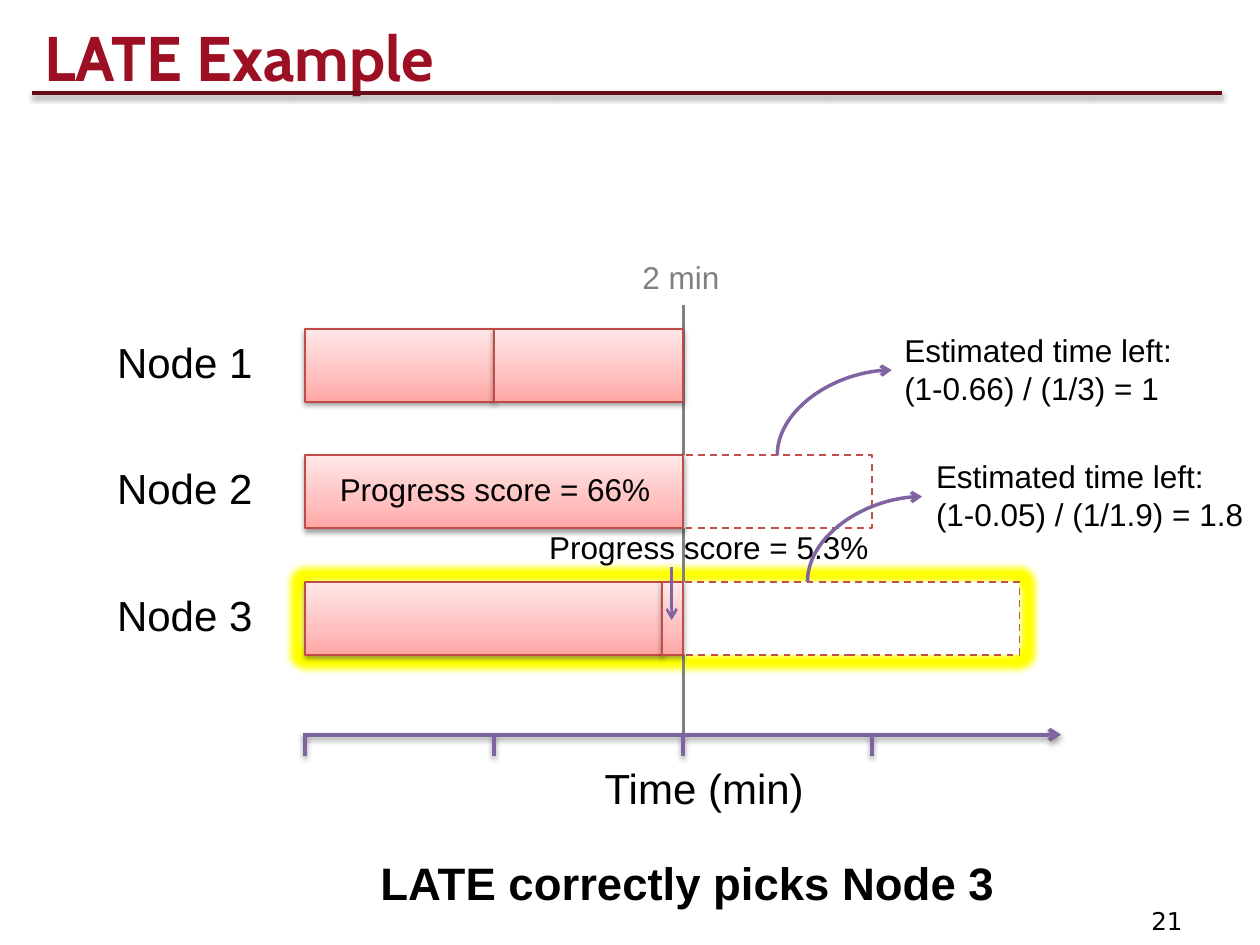
"""Build the LATE example slide: node progress bars over a time axis."""
from copy import deepcopy
from lxml.etree import SubElement as Sub
from pptx import Presentation
from pptx.dml.color import RGBColor as Rgb
from pptx.enum.dml import MSO_LINE as Dash
from pptx.enum.shapes import MSO_CONNECTOR as Link, MSO_SHAPE as Kind
from pptx.enum.text import MSO_ANCHOR as Anchor, PP_ALIGN as Align
from pptx.oxml.ns import qn
from pptx.util import Cm, Pt

HUES = {
    "title": "9D1023", "rule": "680B17", "text": "000000", "mark": "808080",
    "axis": "8064A2", "edge": "BF4C48", "dash": "C0504D", "glow": "FFFF00",
    "white": "FFFFFF", "low": "FFA6A5", "mid": "FFC0BF", "high": "FFE7E7",
}
LEFT, UNIT = 6.15, 3.81
TOP, STEP, BAR = 6.63, 2.55, 1.47
AXIS = 14.81


def hue(name):
    return Rgb.from_string(HUES[name])


def at(time):
    return LEFT + UNIT * time


def row(node):
    return TOP + STEP * (node - 1)


def effect(shape, tag, name, alpha, **attrs):
    """Add one effect to a shape or connector."""
    props = shape.element.spPr
    box = props.find(qn("a:effectLst"))
    if box is None:
        box = Sub(props, qn("a:effectLst"))
    item = Sub(box, qn(tag), attrs)
    color = Sub(item, qn("a:srgbClr"), val=HUES[name])
    Sub(color, qn("a:alpha"), val=str(alpha * 1000))


def shade(shape):
    effect(shape, "a:outerShdw", "text", 38, blurRad="40000", dist="20000",
           dir="5400000", rotWithShape="0")


def style(font, size, color="text", bold=False, face="Arial"):
    font.size, font.bold, font.name = Pt(size), bold, face
    font.color.rgb = hue(color)


def label(slide, text, box, size, wrap=False, **look):
    """Add a text box with one look for all its lines."""
    frame = slide.shapes.add_textbox(*map(Cm, box)).text_frame
    frame.word_wrap = wrap
    frame.text = text
    for para in frame.paragraphs:
        style(para.font, size, **look)


def line(slide, ends, color, width, shadow=False, arrow=None, kind=Link.STRAIGHT):
    """Add a connector, with an arrowhead at headEnd or tailEnd if asked."""
    link = slide.shapes.add_connector(kind, *map(Cm, ends))
    link.line.color.rgb = hue(color)
    link.line.width = Pt(width)
    props = link.element.spPr
    if arrow:
        Sub(props.find(qn("a:ln")), qn(arrow), type="arrow")
    Sub(props, qn("a:effectLst"))
    if shadow:
        shade(link)
    return link


def curve(slide, x, y):
    """Add a quarter curve that rises from a bar to its estimate."""
    link = line(slide, (x + 2.31, y - 1.72, x, y), "axis", 2,
                arrow="a:headEnd", kind=Link.CURVE)
    link.element.spPr.find(qn("a:prstGeom")).set("prst", "curvedConnector2")


def block(slide, box, edge, width, kind=Kind.RECTANGLE):
    shape = slide.shapes.add_shape(kind, *map(Cm, box))
    shape.shadow.inherit = False
    shape.line.color.rgb = hue(edge)
    shape.line.width = Pt(width)
    return shape


def span(node, start, end):
    return at(start), row(node), UNIT * (end - start), BAR


def done(slide, node, start, end):
    """Add a bar of finished work with a three-stop gradient."""
    shape = block(slide, span(node, start, end), "edge", 1)
    fill = shape.fill
    fill.gradient()
    fill.gradient_angle = 90
    stop = next(shape.element.spPr.iter(qn("a:gs")))
    stop.addnext(deepcopy(stop))
    shades = (("low", 0), ("mid", 0.35), ("high", 1))
    for part, (name, place) in zip(fill.gradient_stops, shades):
        part.color.rgb = hue(name)
        part.position = place
    shade(shape)


def left(slide, node, start, end):
    """Add a dashed bar of work still to do."""
    shape = block(slide, span(node, start, end), "dash", 1)
    shape.fill.solid()
    shape.fill.fore_color.rgb = hue("white")
    shape.line.dash_style = Dash.DASH


def halo(slide):
    shape = block(slide, (5.97, 11.58, 14.73, 1.75), "glow", 0.75,
                  Kind.ROUNDED_RECTANGLE)
    shape.fill.background()
    effect(shape, "a:glow", "glow", 100, rad="101600")


def head(slide):
    """Format the title and draw the rule below it."""
    line(slide, (0.64, 1.88, 24.64, 1.88), "rule", 2, shadow=True)
    title = slide.shapes.title
    title.left, title.top, title.width, title.height = map(
        Cm, (0.64, 0.23, 24, 1.8))
    frame = title.text_frame
    frame.text = "LATE Example"
    frame.vertical_anchor = Anchor.MIDDLE
    para = frame.paragraphs[0]
    para.alignment = Align.LEFT
    style(para.font, 36, "title", True, "Cabin")


def bars(slide):
    halo(slide)
    line(slide, (at(2), AXIS + 0.1, at(2), 6.15), "mark", 1.75)
    left(slide, 3, 2, 3.78)
    left(slide, 2, 2, 3)
    for node in (1, 2, 3):
        label(slide, f"Node {node}", (2.11, row(node) + 0.02, 3.28, 1.28), 24)
    for part in ((1, 0, 1), (2, 0, 2), (1, 1, 2), (3, 0, 1.89), (3, 1.89, 2)):
        done(slide, *part)


def axis(slide):
    line(slide, (LEFT - 0.05, AXIS, at(4), AXIS), "axis", 2.25,
         shadow=True, arrow="a:tailEnd")
    for time in range(4):
        line(slide, (at(time), AXIS, at(time), AXIS + 0.43), "axis", 2, shadow=True)
    label(slide, "2 min", (12.7, 5.08, 2.08, 1.02), 18, color="mark")
    label(slide, "Time (min)", (11.94, 15.24, 4.57, 1.28), 24)


def notes(slide):
    label(slide, "Progress score = 5.3%", (10.82, 10.52, 7.01, 1.02), 18)
    line(slide, (13.54, 11.43, 13.54, 12.5), "axis", 1.5, arrow="a:tailEnd")
    curve(slide, 15.67, row(2))
    curve(slide, 16.28, row(3))
    first = "Estimated time left:\n"
    label(slide, first + "(1-0.66) / (1/3) = 1", (17.98, 6.55, 6.35, 1.8), 18, True)
    label(slide, first + "(1-0.05) / (1/1.9) = 1.8", (18.62, 9.09, 6.78, 1.8), 18, True)
    label(slide, "Progress score = 66%", (6.6, 9.35, 6.83, 1.02), 18)
    label(slide, "LATE correctly picks Node 3", (7.42, 17.12, 13, 1.37), 26, bold=True)
    label(slide, "21", (22.96, 18.14, 1.88, 0.81), 14, True, face="DejaVu Sans")


def main():
    deck = Presentation()
    deck.slide_width, deck.slide_height = Cm(25.4), Cm(19.05)
    slide = deck.slides.add_slide(deck.slide_layouts[5])
    for part in (head, bars, axis, notes):
        part(slide)
    deck.save("out.pptx")


if __name__ == "__main__":
    main()
